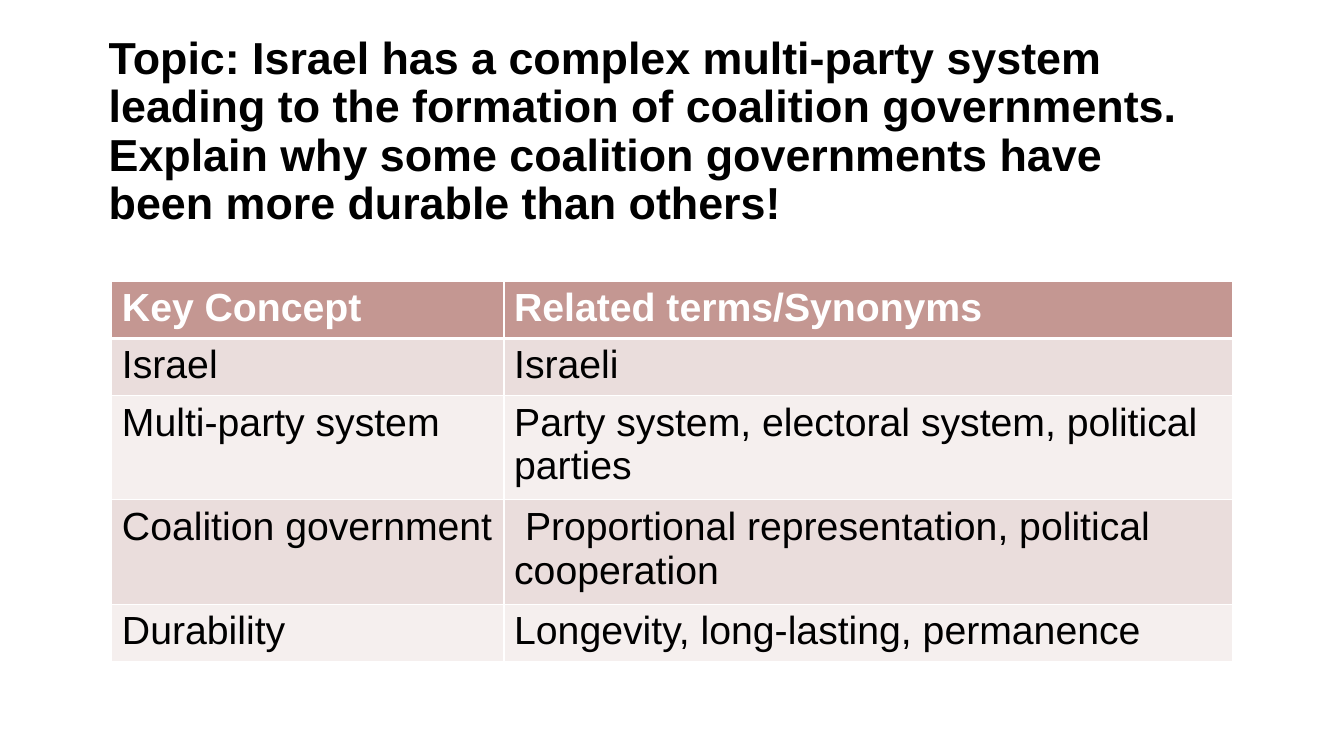
from lxml import etree
from pptx import Presentation
from pptx.dml.color import RGBColor
from pptx.enum.text import MSO_ANCHOR
from pptx.oxml.ns import qn
from pptx.util import Inches, Pt

MIDDLE = MSO_ANCHOR.MIDDLE
FONT = "Arial"
BLACK, WHITE = "000000", "FFFFFF"
HEADER_FILL = "C49792"
BAND_FILLS = ["EADDDC", "F5EFEE"]
COLUMN_WIDTHS = [3.89, 7.23]
ROW_HEIGHT = 0.41
TITLE = (
    "Topic: Israel has a complex multi-party system leading to the formation "
    "of coalition governments. Explain why some coalition governments have "
    "been more durable than others!"
)
CONCEPTS = [
    ("Key Concept", "Related terms/Synonyms"),
    ("Israel", "Israeli"),
    ("Multi-party system", "Party system, electoral system, political parties"),
    ("Coalition government", " Proportional representation, political cooperation"),
    ("Durability", "Longevity, long-lasting, permanence"),
]


def color(value):
    """Turn a hex string into a colour."""
    return RGBColor.from_string(value)


def write(frame, text, size, fill, bold):
    """Put one formatted paragraph into a text frame and return it."""
    frame.text = text
    para = frame.paragraphs[0]
    font = para.runs[0].font
    font.name, font.size, font.bold = FONT, Pt(size), bold
    font.color.rgb = color(fill)
    return para


def add_title(page):
    """Add the topic heading, centred vertically in its box."""
    box = page.shapes.add_textbox(Inches(0.98), Inches(0.67), Inches(11.12), Inches(1.29))
    frame = box.text_frame
    frame.word_wrap = True
    frame.vertical_anchor = MIDDLE
    write(frame, TITLE, 32, BLACK, True).line_spacing = 0.9


def set_borders(cell, bottom):
    """Draw white borders around a cell, with its own bottom width."""
    properties = cell._tc.get_or_add_tcPr()
    for side, width in (("L", 1), ("R", 1), ("T", 1), ("B", bottom)):
        line = etree.SubElement(properties, qn(f"a:ln{side}"), w=str(Pt(width)))
        solid = etree.SubElement(line, qn("a:solidFill"))
        etree.SubElement(solid, qn("a:srgbClr"), val=WHITE)


def style_cell(cell, text, row):
    """Fill and write a cell as header or as banded body."""
    header = row == 0
    set_borders(cell, 3 if header else 1)
    cell.fill.solid()
    cell.fill.fore_color.rgb = color(HEADER_FILL if header else BAND_FILLS[(row - 1) % 2])
    write(cell.text_frame, text, 28, WHITE if header else BLACK, header)


def add_concept_table(page):
    """Add the table of concepts and their synonyms."""
    table = page.shapes.add_table(
        len(CONCEPTS), len(COLUMN_WIDTHS), Inches(1.11), Inches(2.79),
        Inches(sum(COLUMN_WIDTHS)), Inches(ROW_HEIGHT * len(CONCEPTS)),
    ).table
    for column, width in zip(table.columns, COLUMN_WIDTHS):
        column.width = Inches(width)
    for row, texts in enumerate(CONCEPTS):
        for column, text in enumerate(texts):
            style_cell(table.cell(row, column), text, row)


def main():
    """Build and save the slide."""
    deck = Presentation()
    deck.slide_width, deck.slide_height = Inches(13.33), Inches(7.5)
    page = deck.slides.add_slide(deck.slide_layouts[6])
    add_title(page)
    add_concept_table(page)
    deck.save("out.pptx")


if __name__ == "__main__":
    main()
